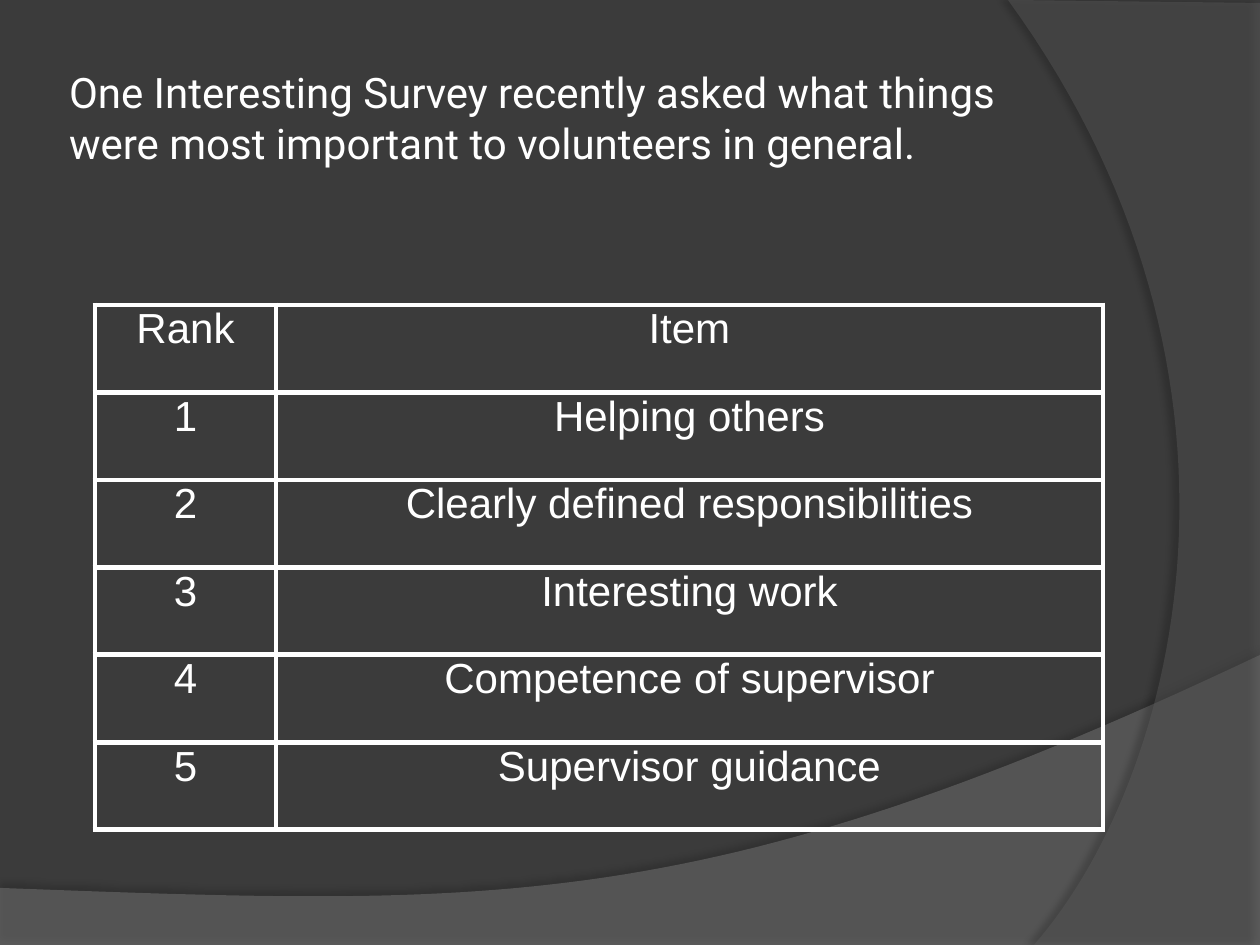
"""Build a slide with a survey ranking table over two translucent curves."""
from lxml import etree
from pptx import Presentation
from pptx.dml.color import RGBColor
from pptx.enum.text import MSO_ANCHOR, PP_ALIGN
from pptx.oxml.ns import qn
from pptx.util import Pt

CENTER = PP_ALIGN.CENTER
MIDDLE = MSO_ANCHOR.MIDDLE
WHITE = RGBColor(0xFF, 0xFF, 0xFF)
BACKGROUND = RGBColor(0x3B, 0x3B, 0x3B)
WAVE_GRAY = RGBColor(0x7F, 0x7F, 0x7F)
ARC_GRAY = RGBColor(0x5E, 0x5E, 0x5E)
SHADOW = RGBColor(0, 0, 0)

SCALE = 914400 / 126
SLIDE_SIZE = (1260, 945)
CURVE_STEPS = 60
TEXT_SIZE = 24
BORDER_WIDTH = 3

TITLE = ("One Interesting Survey recently asked what things "
         "were most important to volunteers in general.")
TITLE_BOX = (63, 38, 1029, 158)
TITLE_INSET = 6

HEADER = ("Rank", "Item")
ITEMS = [
    "Helping others",
    "Clearly defined responsibilities",
    "Interesting work",
    "Competence of supervisor",
    "Supervisor guidance",
]
TABLE_BOX = (95, 305, 1008, 525)
COLUMN_WIDTHS = (181, 827)

CURVES = [
    {"corners": [(0, 888), (0, 946), (1260, 946)],
     "bezier": [(1260, 655), (704, 919), (493, 906), (0, 888)],
     "color": WAVE_GRAY, "opacity": 45,
     "shadow": {"opacity": 35, "blur": 4, "distance": 3.5, "angle": 270}},
    {"corners": [(1260, 3), (1260, 945)],
     "bezier": [(1034, 945), (1178, 780), (1283, 378), (1008, 0)],
     "color": ARC_GRAY, "opacity": 40,
     "shadow": {"opacity": 45, "blur": 4, "distance": 4, "angle": 180}},
]


def emu(*lengths):
    return [round(length * SCALE) for length in lengths]


def bezier_points(start, first, second, end):
    for step in range(CURVE_STEPS + 1):
        t = step / CURVE_STEPS
        weights = ((1 - t) ** 3, 3 * t * (1 - t) ** 2, 3 * t * t * (1 - t), t ** 3)
        yield tuple(sum(weight * value for weight, value in zip(weights, axis))
                    for axis in zip(start, first, second, end))


def set_opacity(color, percent):
    etree.SubElement(color, qn("a:alpha"), val=str(percent * 1000))


def add_shadow(shape, opacity, blur, distance, angle):
    shape.shadow.inherit = False
    effects = shape.element.spPr.find(qn("a:effectLst"))
    outer = etree.SubElement(effects, qn("a:outerShdw"), blurRad=str(Pt(blur)),
                             dist=str(Pt(distance)), dir=str(angle * 60000),
                             algn="ctr", rotWithShape="0")
    set_opacity(etree.SubElement(outer, qn("a:srgbClr"), val=str(SHADOW)), opacity)


def add_curve(slide, curve):
    points = [emu(*point)
              for point in curve["corners"] + list(bezier_points(*curve["bezier"]))]
    builder = slide.shapes.build_freeform(*points[0])
    builder.add_line_segments(points[1:], close=True)
    shape = builder.convert_to_shape()
    shape.fill.solid()
    shape.fill.fore_color.rgb = curve["color"]
    set_opacity(shape.element.spPr.find(".//" + qn("a:srgbClr")), curve["opacity"])
    shape.line.fill.background()
    add_shadow(shape, **curve["shadow"])


def format_text(para, font_name):
    for span in para.runs:
        span.font.name = font_name
        span.font.size = Pt(TEXT_SIZE)
        span.font.color.rgb = WHITE


def add_title(slide):
    frame = slide.shapes.add_textbox(*emu(*TITLE_BOX)).text_frame
    frame.word_wrap = True
    frame.vertical_anchor = MIDDLE
    inset, = emu(TITLE_INSET)
    frame.margin_left = frame.margin_right = inset
    frame.margin_top = frame.margin_bottom = inset
    frame.text = TITLE
    format_text(frame.paragraphs[0], "Roboto")


def format_cell(cell, text):
    cell.text = text
    cell.margin_left, cell.margin_right, cell.margin_top, cell.margin_bottom = emu(1, 1, 1, 0)
    para = cell.text_frame.paragraphs[0]
    para.alignment = CENTER
    format_text(para, "Arial")
    properties = cell._tc.get_or_add_tcPr()
    for side in ("a:lnL", "a:lnR", "a:lnT", "a:lnB"):
        line = etree.SubElement(properties, qn(side), w=str(Pt(BORDER_WIDTH)))
        fill = etree.SubElement(line, qn("a:solidFill"))
        etree.SubElement(fill, qn("a:srgbClr"), val=str(WHITE))
    cell.fill.background()


def add_ranking(slide):
    rows = [HEADER] + [(str(rank), item) for rank, item in enumerate(ITEMS, 1)]
    table = slide.shapes.add_table(len(rows), len(HEADER), *emu(*TABLE_BOX)).table
    table.first_row = table.horz_banding = False
    for column, width in zip(table.columns, emu(*COLUMN_WIDTHS)):
        column.width = width
    for row, texts in zip(table.rows, rows):
        for cell, text in zip(row.cells, texts):
            format_cell(cell, text)


def main():
    deck = Presentation()
    deck.slide_width, deck.slide_height = emu(*SLIDE_SIZE)
    slide = deck.slides.add_slide(deck.slide_layouts[6])
    slide.background.fill.solid()
    slide.background.fill.fore_color.rgb = BACKGROUND
    for curve in CURVES:
        add_curve(slide, curve)
    add_title(slide)
    add_ranking(slide)
    deck.save("out.pptx")


if __name__ == "__main__":
    main()
